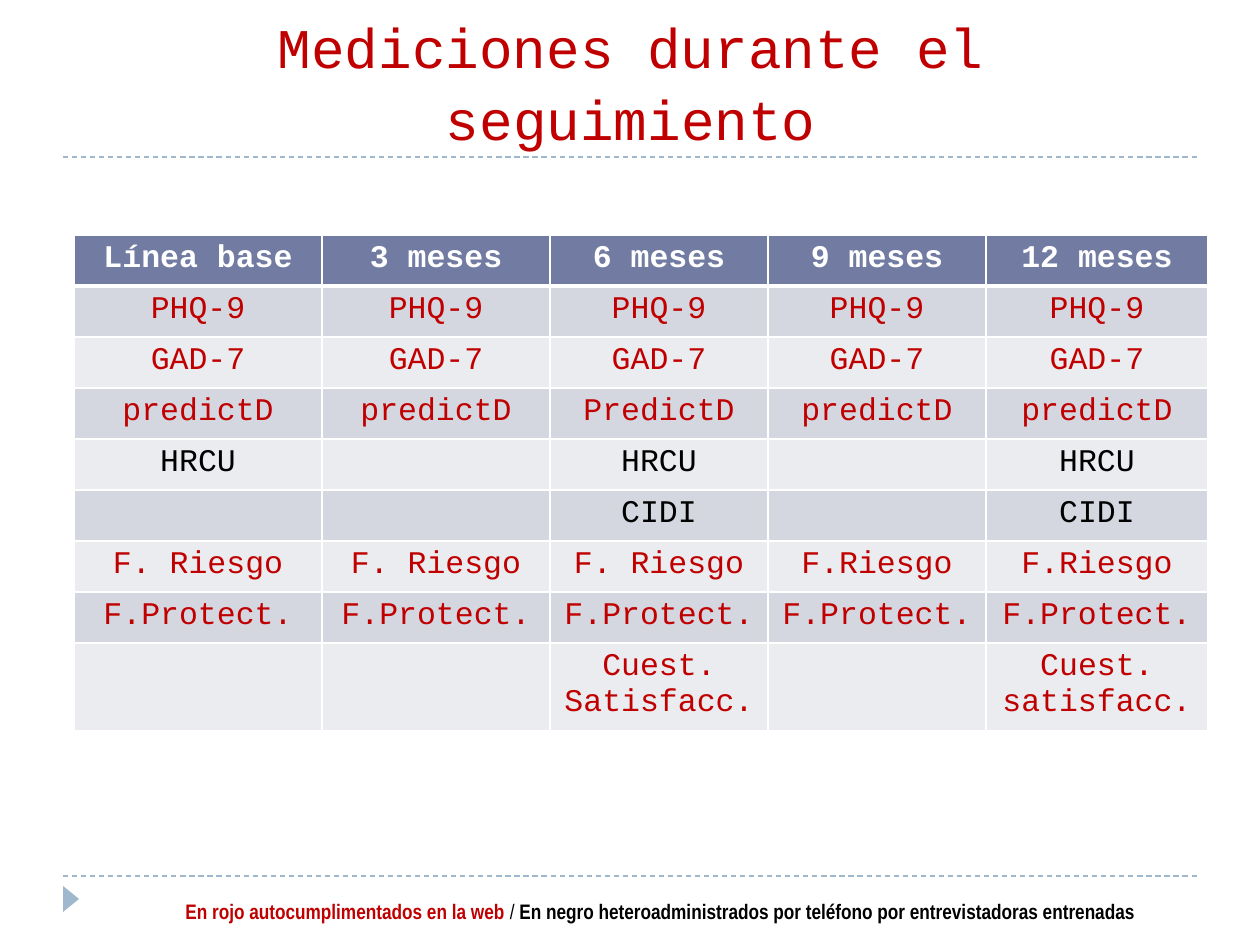
from pptx import Presentation
from pptx.dml.color import RGBColor
from pptx.enum.dml import MSO_LINE
from pptx.enum.shapes import MSO_CONNECTOR, MSO_SHAPE
from pptx.enum.text import MSO_ANCHOR, PP_ALIGN
from pptx.oxml import parse_xml
from pptx.oxml.ns import nsdecls
from pptx.util import Pt

EMU_PER_PX = 914400 / 126
RED, BLACK, WHITE = "C00000", "000000", "FFFFFF"
HEADER, BAND_DARK, BAND_LIGHT = "727CA3", "D5D7E0", "EBECF0"
ACCENT = "9FB8CD"
MONO, NARROW = "Courier New", "Arial Narrow"

VISITS = ["Línea base", "3 meses", "6 meses", "9 meses", "12 meses"]
MEASURES = [
    (RED, ["PHQ-9"] * 5),
    (RED, ["GAD-7"] * 5),
    (RED, ["predictD", "predictD", "PredictD", "predictD", "predictD"]),
    (BLACK, ["HRCU", "", "HRCU", "", "HRCU"]),
    (BLACK, ["", "", "CIDI", "", "CIDI"]),
    (RED, ["F. Riesgo"] * 3 + ["F.Riesgo"] * 2),
    (RED, ["F.Protect."] * 5),
    (RED, ["", "", "Cuest. Satisfacc.", "", "Cuest. satisfacc."]),
]
COLUMN_WIDTHS = [248, 228, 218, 218, 222]
ROW_HEIGHTS = [51] * 8 + [84]


def px(length):
    return round(length * EMU_PER_PX)


def color(hex_value):
    return RGBColor.from_string(hex_value)


class SlideBuilder:
    def __init__(self, slide):
        self.shapes = slide.shapes

    def style(self, font, name, size, hex_value=None, bold=False):
        font.name, font.size, font.bold = name, Pt(size), bold
        if hex_value:
            font.color.rgb = color(hex_value)

    def rule(self, left, right, y):
        rule = self.shapes.add_connector(
            MSO_CONNECTOR.STRAIGHT, px(left), px(y), px(right), px(y))
        rule.line.color.rgb = color(ACCENT)
        rule.line.width = Pt(0.75)
        rule.line.dash_style = MSO_LINE.DASH
        rule._element.spPr.append(parse_xml(f"<a:effectLst {nsdecls('a')}/>"))

    def marker(self, left, top, width, height):
        marker = self.shapes.add_shape(
            MSO_SHAPE.ISOSCELES_TRIANGLE, px(left), px(top), px(width), px(height))
        marker.rotation = 90
        marker.shadow.inherit = False
        marker.fill.solid()
        marker.fill.fore_color.rgb = color(ACCENT)
        marker.line.fill.background()

    def text(self, box, anchor, side_margin, end_margin):
        frame = self.shapes.add_textbox(*map(px, box)).text_frame
        frame.word_wrap = True
        frame.vertical_anchor = anchor
        frame.margin_left = frame.margin_right = px(side_margin)
        frame.margin_top = frame.margin_bottom = px(end_margin)
        paragraph = frame.paragraphs[0]
        paragraph.alignment = PP_ALIGN.CENTER
        return paragraph

    def title(self, wording, box):
        heading = self.text(box, MSO_ANCHOR.BOTTOM, 100, 0)
        heading.text = wording
        heading.line_spacing = 1.07
        self.style(heading.font, MONO, 32, RED)

    def legend(self, parts, box):
        legend = self.text(box, MSO_ANCHOR.TOP, 13, 6)
        for wording, hex_value, bold in parts:
            run = legend.add_run()
            run.text = wording
            self.style(run.font, NARROW, 12, hex_value, bold)

    def borders(self, cell, points):
        properties = cell._tc.get_or_add_tcPr()
        for position, (side, width) in enumerate(points.items()):
            properties.insert(position, parse_xml(
                f'<a:ln{side} {nsdecls("a")} w="{Pt(width)}"><a:solidFill>'
                f'<a:srgbClr val="{WHITE}"/></a:solidFill></a:ln{side}>'))

    def cell(self, cell, wording, fill, ink, bold, points):
        cell.fill.solid()
        cell.fill.fore_color.rgb = color(fill)
        self.borders(cell, points)
        entry = cell.text_frame.paragraphs[0]
        entry.text = wording
        entry.alignment = PP_ALIGN.CENTER
        self.style(entry.font, MONO, 18, ink, bold)

    def schedule(self, left, top):
        rows = [(WHITE, VISITS)] + MEASURES
        table = self.shapes.add_table(
            len(rows), len(VISITS), px(left), px(top),
            px(sum(COLUMN_WIDTHS)), px(sum(ROW_HEIGHTS))).table
        for column, width in zip(table.columns, COLUMN_WIDTHS):
            column.width = px(width)
        for row, height in zip(table.rows, ROW_HEIGHTS):
            row.height = px(height)
        for r, (ink, entries) in enumerate(rows):
            is_header = r == 0
            fill = HEADER if is_header else (BAND_DARK if r % 2 else BAND_LIGHT)
            points = {"L": 1, "R": 1, "T": 3 if r == 1 else 1,
                      "B": 3 if is_header else 1}
            for c, wording in enumerate(entries):
                self.cell(table.cell(r, c), wording, fill, ink, is_header, points)


def main():
    deck = Presentation()
    deck.slide_width, deck.slide_height = px(1260), px(945)
    builder = SlideBuilder(deck.slides.add_slide(deck.slide_layouts[6]))
    for y in (876, 157):
        builder.rule(63, 1197, y)
    builder.marker(58, 891, 26, 16)
    builder.title("Mediciones durante el seguimiento", (64, 16, 1134, 136))
    builder.schedule(74, 235)
    builder.legend([
        ("En rojo autocumplimentados en la web ", RED, True),
        ("/ ", BLACK, False),
        ("En negro heteroadministrados por teléfono por entrevistadoras entrenadas",
         BLACK, True),
    ], (115, 893, 1091, 38))
    deck.save("out.pptx")


if __name__ == "__main__":
    main()
